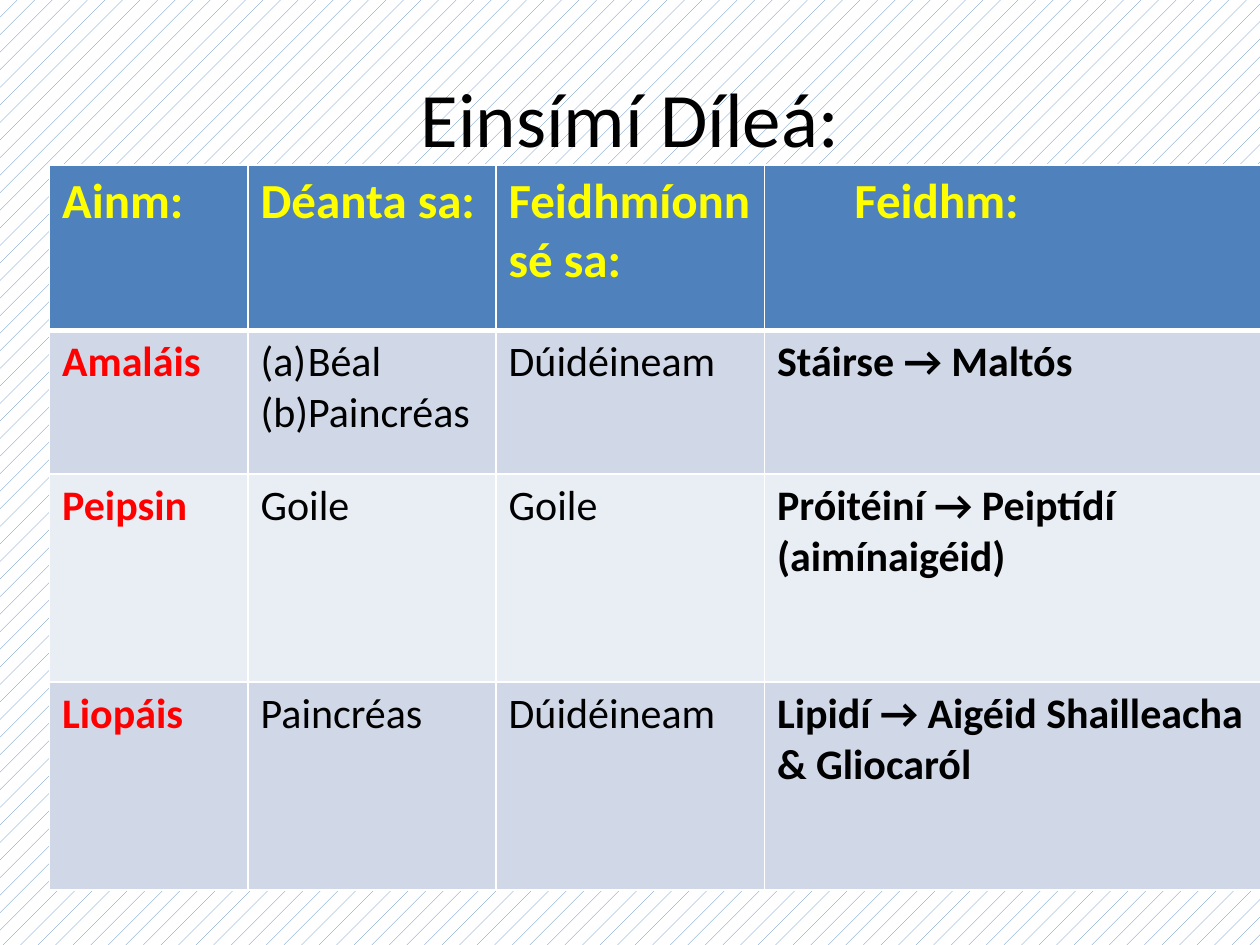
from lxml.etree import SubElement
from pptx import Presentation
from pptx.dml.color import RGBColor
from pptx.enum.dml import MSO_PATTERN
from pptx.enum.text import MSO_ANCHOR, PP_ALIGN
from pptx.oxml.ns import qn
from pptx.util import Cm, Pt

HEADINGS = ["Ainm:", "Déanta sa:", "Feidhmíonn sé sa:", "Feidhm:"]
ENZYMES = [
    ["Amaláis", "Béal\nPaincréas", "Dúidéineam", "Stáirse → Maltós"],
    ["Peipsin", "Goile", "Goile", "Próitéiní → Peiptídí (aimínaigéid)"],
    ["Liopáis", "Paincréas", "Dúidéineam",
     "Lipidí → Aigéid Shailleacha & Gliocaról"],
]
COLUMN_WIDTHS = [4, 5, 5.41, 10]
ROW_HEIGHTS = [3.33, 2.9, 4.19, 4.19]


def rgb(hex_code):
    return RGBColor.from_string(hex_code)


class EnzymeSlide:
    font = "Calibri"
    black, white, blue = "000000", "FFFFFF", "4F81BD"
    yellow, red = "FFFF00", "FF0000"
    bands = ["D0D8E8", "E9EDF4"]

    def __init__(self, presentation):
        self.slide = presentation.slides.add_slide(presentation.slide_layouts[6])

    def background(self):
        fill = self.slide.background.fill
        fill.patterned()
        fill.pattern = MSO_PATTERN.PERCENT_5
        fill.fore_color.rgb = rgb(self.blue)
        fill.back_color.rgb = rgb(self.white)

    def set_text(self, frame, text, size, color, bold=False):
        frame.text = text
        for paragraph in frame.paragraphs:
            for run in paragraph.runs:
                run.font.name = self.font
                run.font.size = Pt(size)
                run.font.bold = bold
                run.font.color.rgb = rgb(color)

    def title(self, text, left, top, width, height):
        box = self.slide.shapes.add_textbox(Cm(left), Cm(top), Cm(width), Cm(height))
        frame = box.text_frame
        frame.word_wrap = True
        frame.vertical_anchor = MSO_ANCHOR.MIDDLE
        self.set_text(frame, text, 44, self.black)
        frame.paragraphs[0].alignment = PP_ALIGN.CENTER

    def indent(self, paragraph, margin, first_line=0):
        properties = paragraph._p.get_or_add_pPr()
        properties.set("marL", str(Cm(margin)))
        properties.set("indent", str(Cm(first_line)))
        return properties

    def letter(self, frame):
        """Number the paragraphs (a), (b) and so on."""
        for paragraph in frame.paragraphs:
            properties = self.indent(paragraph, 0.95, -0.95)
            SubElement(properties, qn("a:buFont"), typeface="+mj-lt")
            SubElement(properties, qn("a:buAutoNum"), type="alphaLcParenBoth")

    def borders(self, cell, top, bottom):
        properties = cell._tc.get_or_add_tcPr()
        for side, width in zip("LRTB", [1, 1, top, bottom]):
            line = SubElement(properties, qn(f"a:ln{side}"), w=str(Pt(width)))
            fill = SubElement(line, qn("a:solidFill"))
            SubElement(fill, qn("a:srgbClr"), val=self.white)

    def cell(self, cell, text, row, column):
        self.borders(cell, 3 if row == 1 else 1, 3 if row == 0 else 1)
        cell.fill.solid()
        frame = cell.text_frame
        if row == 0:
            cell.fill.fore_color.rgb = rgb(self.blue)
            self.set_text(frame, text, 28, self.yellow, bold=True)
        else:
            cell.fill.fore_color.rgb = rgb(self.bands[(row - 1) % 2])
            color = self.red if column == 0 else self.black
            self.set_text(frame, text, 24, color, bold=column in (0, 3))
        if len(frame.paragraphs) > 1:
            self.letter(frame)

    def table(self, rows, left, top):
        table = self.slide.shapes.add_table(
            len(rows), len(rows[0]), Cm(left), Cm(top),
            Cm(sum(COLUMN_WIDTHS)), Cm(sum(ROW_HEIGHTS))).table
        table.horz_banding = False
        for column, width in zip(table.columns, COLUMN_WIDTHS):
            column.width = Cm(width)
        for row, height in zip(table.rows, ROW_HEIGHTS):
            row.height = Cm(height)
        for r, texts in enumerate(rows):
            for c, text in enumerate(texts):
                self.cell(table.cell(r, c), text, r, c)
        return table


def main():
    presentation = Presentation()
    presentation.slide_width, presentation.slide_height = Cm(25.4), Cm(19.05)
    page = EnzymeSlide(presentation)
    page.background()
    page.title("Einsímí Díleá:", 1.27, 0.76, 22.86, 3.18)
    enzymes = page.table([HEADINGS] + ENZYMES, 1, 3.33)
    page.indent(enzymes.cell(0, 3).text_frame.paragraphs[0], 1.56)
    presentation.save("out.pptx")


if __name__ == "__main__":
    main()
